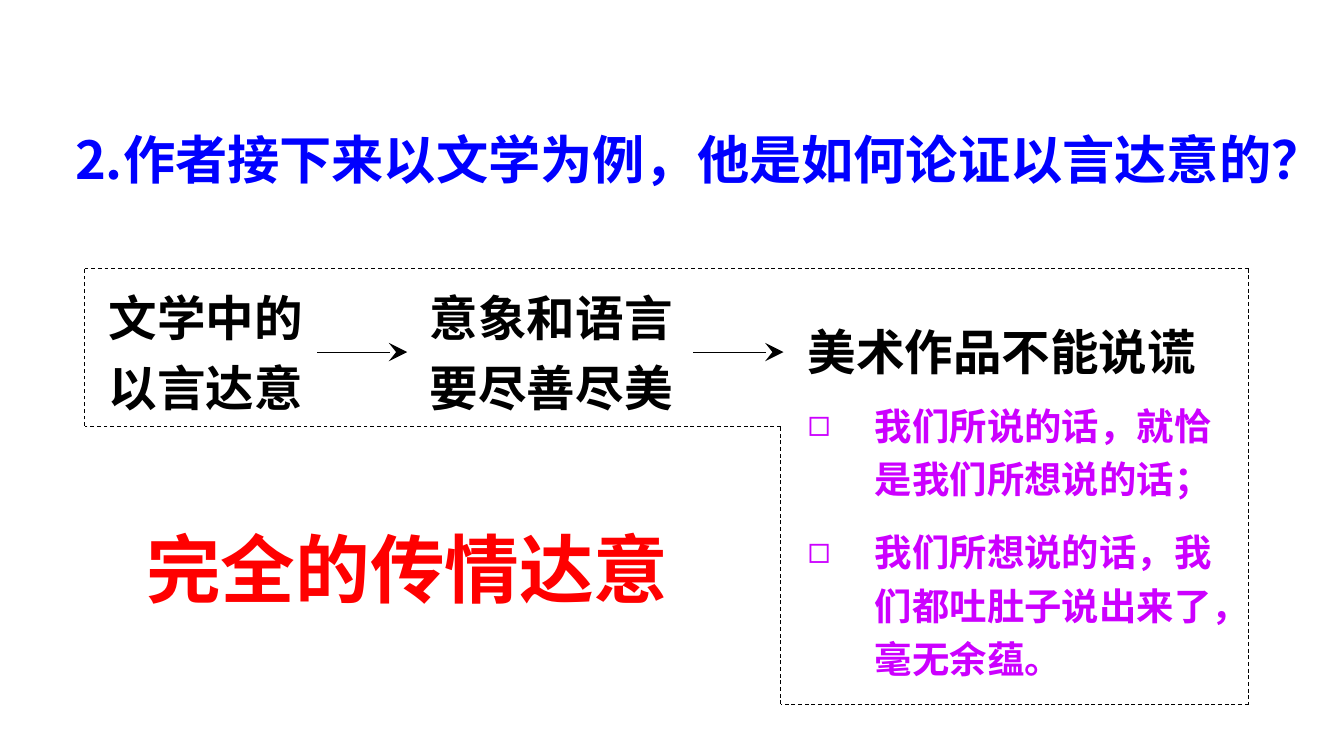
"""Build a slide on how the author argues that words can fully convey meaning."""
from lxml.etree import SubElement
from pptx import Presentation
from pptx.dml.color import RGBColor
from pptx.enum.dml import MSO_LINE_DASH_STYLE as DASH
from pptx.enum.shapes import MSO_CONNECTOR as CONNECTOR
from pptx.enum.text import MSO_ANCHOR as ANCHOR, MSO_AUTO_SIZE as AUTO_SIZE, PP_ALIGN as ALIGN
from pptx.oxml.ns import qn
from pptx.util import Inches, Pt

FONT = "Noto Sans CJK SC"
COLORS = {"question": "0000FF", "step": "000000", "point": "CC00FF", "conclusion": "FF0000"}


def write(box, place, lines, size, color, anchor=ANCHOR.MIDDLE, bullet=None):
    box.left, box.top, box.width, box.height = map(Inches, place)
    frame = box.text_frame
    frame.text = "\n".join(lines)
    frame.word_wrap = True
    frame.auto_size = AUTO_SIZE.NONE if bullet else AUTO_SIZE.SHAPE_TO_FIT_TEXT
    frame.vertical_anchor = anchor
    for para in frame.paragraphs:
        para.alignment = ALIGN.LEFT
        para.line_spacing = 1.2
        para.space_before = Pt(size / 2)
        props = para._p.get_or_add_pPr()
        if bullet:
            props.set("marL", str(Inches(0.5)))
            props.set("indent", str(Inches(-0.5)))
            SubElement(props, qn("a:buChar"), char=bullet)
        para.font.size = Pt(size)
        para.font.bold = True
        para.font.color.rgb = RGBColor.from_string(COLORS[color])
        para.font.name = FONT
        SubElement(props.find(qn("a:defRPr")), qn("a:ea"), typeface=FONT)


def draw_line(x1, y1, x2, y2):
    line = page.shapes.add_connector(CONNECTOR.STRAIGHT, *map(Inches, (x1, y1, x2, y2)))
    line.line.color.rgb = RGBColor.from_string(COLORS["step"])
    line.line.width = Pt(0.5)
    SubElement(line._element.spPr, qn("a:effectLst"))
    return line


deck = Presentation()
deck.slide_width, deck.slide_height = Inches(10), Inches(10 * 9 / 16)
page = deck.slides.add_slide(deck.slide_layouts[1])

write(page.shapes.title, (0.46, 0.8, 9.65, 0.66),
      ["2.作者接下来以文学为例，他是如何论证以言达意的？"], 28, "question", ANCHOR.TOP)

statements = [
    ("文学中的以言达意", (0.71, 2, 1.89, 1.15), 26, "step"),
    ("意象和语言要尽善尽美", (3.1, 2, 2.14, 1.15), 26, "step"),
    ("美术作品不能说谎", (5.91, 2.26, 3.31, 0.62), 26, "step"),
    ("完全的传情达意", (0.99, 3.7, 4.25, 0.91), 40, "conclusion"),
]
for text, place, size, color in statements:
    write(page.shapes.add_textbox(0, 0, 0, 0), place, [text], size, color)

points = ["我们所说的话，就恰是我们所想说的话；", "我们所想说的话，我们都吐肚子说出来了，毫无余蕴。"]
write(page.placeholders[1], (5.91, 2.88, 3.31, 2.29), points, 20, "point", ANCHOR.TOP, "◻")

for start in (2.36, 5.16):
    arrow = draw_line(start, 2.62, start + 0.67, 2.62)
    SubElement(arrow.line._get_or_add_ln(), qn("a:tailEnd"), type="stealth", w="lg", len="lg")

left, inner, right = 0.63, 5.81, 9.29
top, middle, bottom = 2, 3.17, 5.24
corners = [(left, top), (right, top), (right, bottom), (inner, bottom), (inner, middle), (left, middle)]
for start, end in zip(corners, corners[1:] + corners[:1]):
    draw_line(*start, *end).line.dash_style = DASH.DASH

deck.save("out.pptx")
